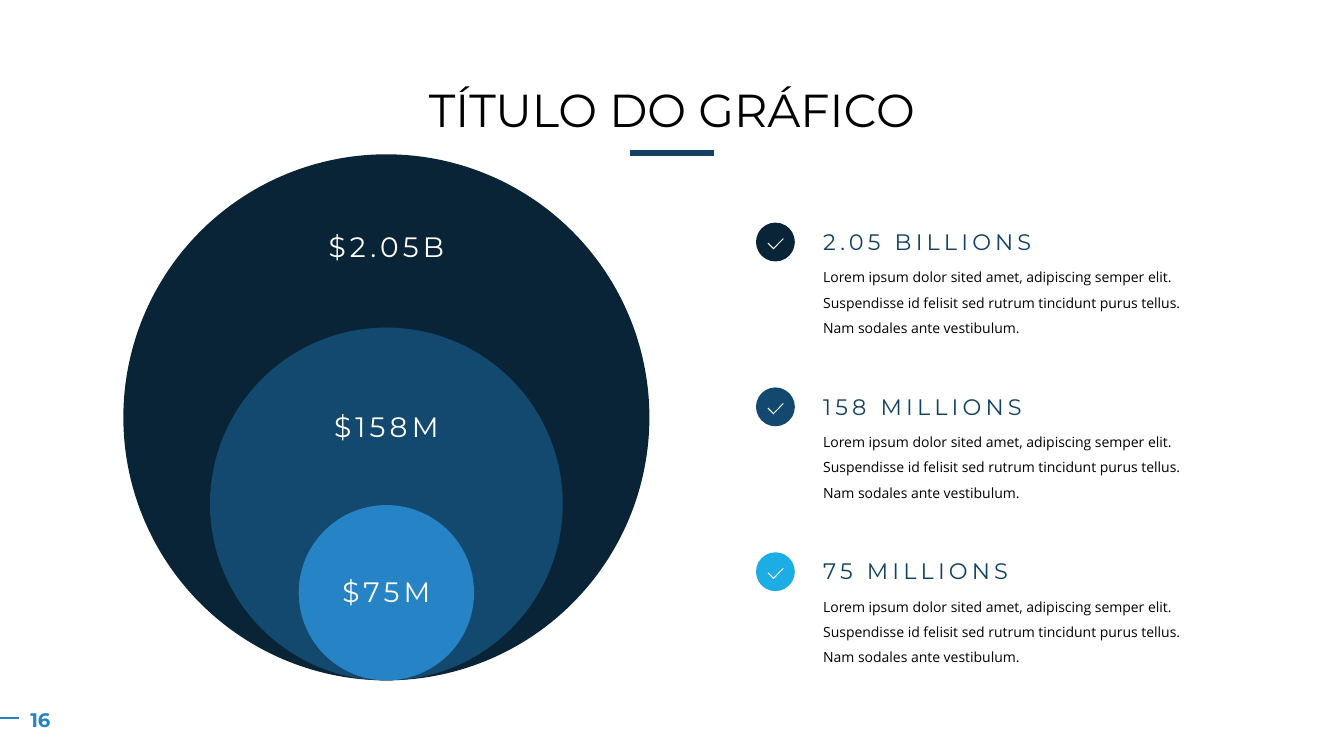
from pptx import Presentation
from pptx.dml.color import RGBColor
from pptx.enum.shapes import MSO_CONNECTOR, MSO_SHAPE
from pptx.enum.text import MSO_ANCHOR, MSO_AUTO_SIZE, PP_ALIGN
from pptx.oxml.xmlchemy import OxmlElement
from pptx.util import Pt

TITLE = "TÍTULO DO GRÁFICO"
PAGE = "16"
BODY = ("Lorem ipsum dolor sited amet, adipiscing semper elit. Suspendisse id "
        "felisit sed rutrum tincidunt purus tellus. Nam sodales ante vestibulum.")
# label, diameter, label top, fill
CIRCLES = [
    ("$2.05B", 501, 214, "navy"),
    ("$158M", 336, 385, "blue"),
    ("$75M", 167, 542, "bright"),
]
# heading, badge fill
ITEMS = [
    ("2.05 BILLIONS", "navy"),
    ("158 MILLIONS", "blue"),
    ("75 MILLIONS", "cyan"),
]
COLORS = {
    "navy": "0A2437", "blue": "14496F", "bright": "2683C6", "cyan": "1CADE4",
    "heading": "124163", "white": "FFFFFF", "black": "000000",
}
HEAD_FONT, BODY_FONT = "Montserrat", "Open Sans"

PX = 9525  # EMU in one px, 96 px to the inch
SLIDE_W, SLIDE_H = 1280, 720
CIRCLE_CENTER, CIRCLE_BOTTOM, LABEL_W = 368, 648, 238
ROW_TOP, ROW_PITCH = 212, 157
BADGE_X, BADGE_SIZE = 720, 37
TEXT_X, TEXT_W, BODY_DROP = 784, 352, 31
# check mark outline in tenths of a px, from its own top left corner
CHECK = [(154, 5), (148, 0), (57, 92), (8, 43), (0, 50), (57, 106)]


def px(n):
    return round(n * PX)


def rgb(name):
    return RGBColor.from_string(COLORS[name])


def paint(sp, color):
    sp.fill.solid()
    sp.fill.fore_color.rgb = rgb(color)
    sp.line.fill.background()
    sp.shadow.inherit = False


def write(sp, text, size, color, font=HEAD_FONT, align=PP_ALIGN.LEFT,
          anchor=MSO_ANCHOR.TOP, bold=False, spacing=0, leading=1.0):
    """Fill a text shape with one formatted run; spacing is in points."""
    tf = sp.text_frame
    tf.word_wrap = True
    tf.auto_size = MSO_AUTO_SIZE.SHAPE_TO_FIT_TEXT
    tf.vertical_anchor = anchor
    tf.margin_left = tf.margin_right = 0
    tf.margin_top = tf.margin_bottom = px(5)
    p = tf.paragraphs[0]
    p.alignment = align
    p.line_spacing = leading
    r = p.add_run()
    r.text = text
    r.font.name = font
    r.font.size = Pt(size)
    r.font.bold = bold
    r.font.color.rgb = rgb(color)
    if spacing:
        r._r.get_or_add_rPr().set("spc", str(spacing * 100))


def add_text(s, x, y, w, h, text, **fmt):
    write(s.shapes.add_textbox(px(x), px(y), px(w), px(h)), text, **fmt)


def add_circle(s, x, y, size, color):
    paint(s.shapes.add_shape(MSO_SHAPE.OVAL, px(x), px(y), px(size), px(size)),
          color)


def add_check(s, x, y):
    builder = s.shapes.build_freeform(*CHECK[0], scale=PX / 10)
    builder.add_line_segments(CHECK[1:], close=True)
    paint(builder.convert_to_shape(px(x), px(y)), "white")


def add_rule(s, x1, x2, y, color, width):
    line = s.shapes.add_connector(MSO_CONNECTOR.STRAIGHT,
                                  px(x1), px(y), px(x2), px(y))
    line.line.color.rgb = rgb(color)
    line.line.width = Pt(width)
    line._element.spPr.append(OxmlElement("a:effectLst"))


def main():
    prs = Presentation()
    prs.slide_width, prs.slide_height = px(SLIDE_W), px(SLIDE_H)
    s = prs.slides.add_slide(prs.slide_layouts[5])

    title = s.shapes.title
    title.left, title.top, title.width, title.height = map(px, (80, 72, 1120, 63))
    write(title, TITLE, size=33, color="black", align=PP_ALIGN.CENTER)
    add_rule(s, 600, 680, 146, "heading", 4.25)

    for label, size, label_y, color in CIRCLES:
        add_circle(s, CIRCLE_CENTER - size / 2, CIRCLE_BOTTOM - size, size, color)
        add_text(s, CIRCLE_CENTER - LABEL_W / 2, label_y, LABEL_W, 44, label,
                 size=20, color="white", align=PP_ALIGN.CENTER, spacing=3)

    for i, (heading, color) in enumerate(ITEMS):
        y = ROW_TOP + i * ROW_PITCH
        add_circle(s, BADGE_X, y, BADGE_SIZE, color)
        add_check(s, BADGE_X + 11, y + 15)
        add_text(s, TEXT_X, y, TEXT_W, 36, heading,
                 size=16, color="heading", spacing=3)
        add_text(s, TEXT_X, y + BODY_DROP, TEXT_W, 80, BODY,
                 size=10, color="black", font=BODY_FONT, leading=1.5)

    add_rule(s, 0, 18, 684, "bright", 1.5)
    add_text(s, 12, 669, 53, 33, PAGE, size=14, color="bright", bold=True,
             align=PP_ALIGN.CENTER, anchor=MSO_ANCHOR.MIDDLE)
    prs.save("out.pptx")


if __name__ == "__main__":
    main()
